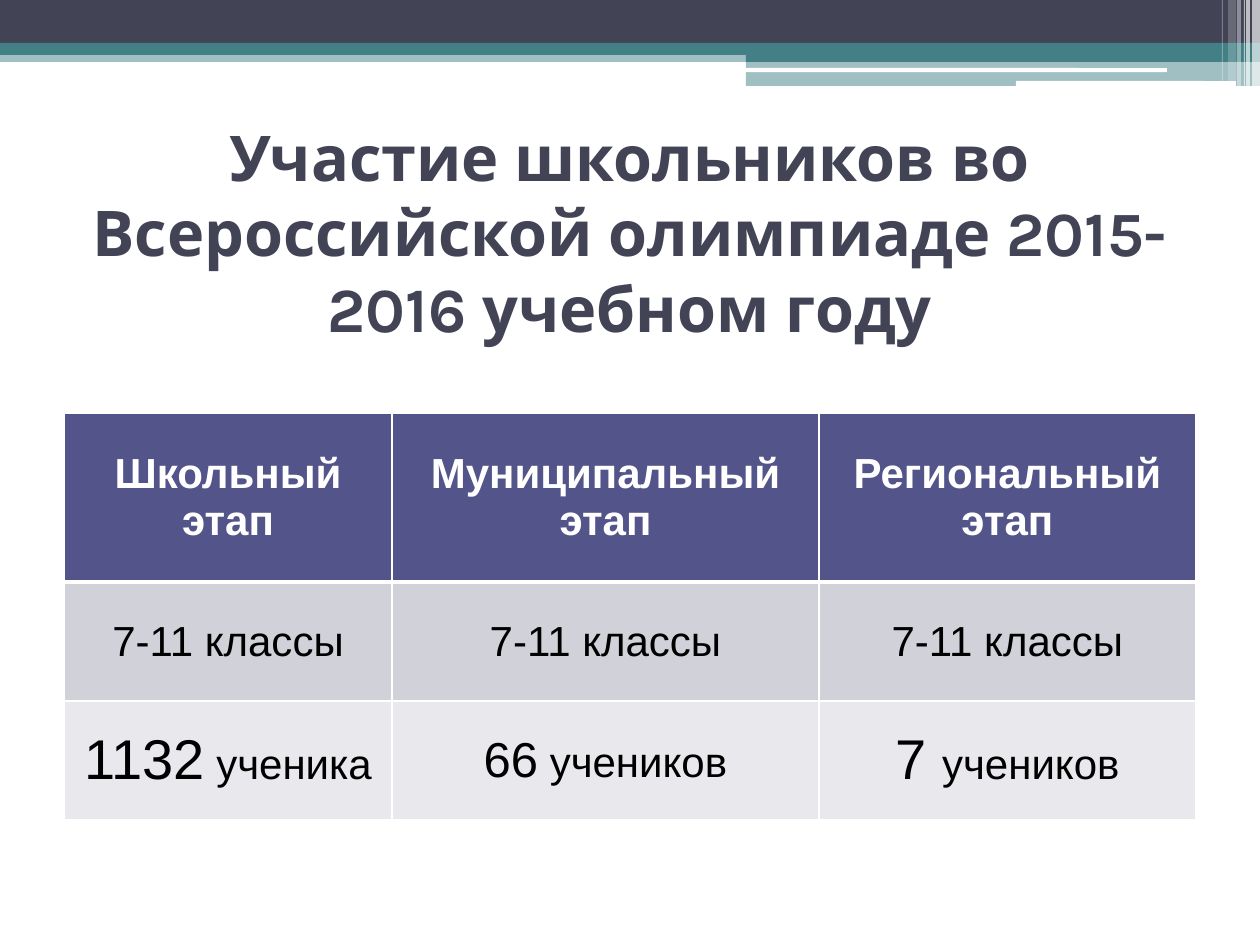
from dataclasses import dataclass

from lxml import etree
from pptx import Presentation
from pptx.dml.color import RGBColor
from pptx.enum.shapes import MSO_SHAPE
from pptx.enum.text import MSO_ANCHOR, MSO_AUTO_SIZE, PP_ALIGN
from pptx.oxml.ns import qn
from pptx.util import Emu, Pt

RECT, ROUNDED = MSO_SHAPE.RECTANGLE, MSO_SHAPE.ROUNDED_RECTANGLE
CENTER, MIDDLE = PP_ALIGN.CENTER, MSO_ANCHOR.MIDDLE
NO_AUTOFIT = MSO_AUTO_SIZE.NONE
PX_PER_INCH = 126
TITLE_ONLY = 5


@dataclass(frozen=True)
class Theme:
    dark: str = "424456"
    teal: str = "438086"
    white: str = "FFFFFF"
    black: str = "000000"
    header: str = "53548A"
    bands: tuple = ("D1D1DA", "E9E9ED")
    title_font: str = "Karla"
    table_font: str = "Arial"
    title_size: int = 36
    table_size: int = 24
    rule: int = 1
    header_rule: int = 3


def px(length):
    return Emu(round(length * 914400 / PX_PER_INCH))


class SlideBuilder:
    def __init__(self, slide, theme):
        self.slide = slide
        self.theme = theme

    def style(self, font, name, size, color, bold):
        font.name, font.size, font.bold = name, Pt(size), bold
        font.color.rgb = RGBColor.from_string(color)

    def bar(self, box, color, opacity=100, kind=RECT):
        bar = self.slide.shapes.add_shape(kind, *map(px, box))
        bar.shadow.inherit = False
        bar.line.fill.background()
        bar.fill.solid()
        bar.fill.fore_color.rgb = RGBColor.from_string(color)
        if opacity < 100:
            tint = bar.fill._xPr.find(".//" + qn("a:srgbClr"))
            etree.SubElement(tint, qn("a:alpha"), val=str(opacity * 1000))

    def title(self, box, text):
        title = self.slide.shapes.title
        title.left, title.top, title.width, title.height = map(px, box)
        frame = title.text_frame
        frame.text = text
        frame.word_wrap = True
        frame.auto_size = NO_AUTOFIT
        frame.vertical_anchor = MIDDLE
        paragraph = frame.paragraphs[0]
        paragraph.alignment = CENTER
        theme = self.theme
        self.style(paragraph.runs[0].font, theme.title_font, theme.title_size,
                   theme.dark, True)

    def borders(self, cell, row):
        theme = self.theme
        widths = {"L": theme.rule, "R": theme.rule,
                  "T": theme.header_rule if row == 1 else theme.rule,
                  "B": theme.header_rule if row == 0 else theme.rule}
        properties = cell._tc.get_or_add_tcPr()
        for side, width in widths.items():
            line = etree.SubElement(properties, qn("a:ln" + side), w=str(Pt(width)))
            paint = etree.SubElement(line, qn("a:solidFill"))
            etree.SubElement(paint, qn("a:srgbClr"), val=theme.white)

    def cell(self, cell, row, runs):
        theme = self.theme
        is_header = row == 0
        cell.vertical_anchor = MIDDLE
        self.borders(cell, row)
        cell.fill.solid()
        fill = theme.header if is_header else theme.bands[(row - 1) % 2]
        cell.fill.fore_color.rgb = RGBColor.from_string(fill)
        paragraph = cell.text_frame.paragraphs[0]
        paragraph.alignment = CENTER
        for text, size in runs:
            run = paragraph.add_run()
            run.text = text
            self.style(run.font, theme.table_font, size,
                       theme.white if is_header else theme.black, is_header)

    def table(self, left, top, widths, heights, rows):
        table = self.slide.shapes.add_table(
            len(heights), len(widths), px(left), px(top),
            px(sum(widths)), px(sum(heights))).table
        for column, width in zip(table.columns, widths):
            column.width = px(width)
        for row, height in zip(table.rows, heights):
            row.height = px(height)
        for r, row in enumerate(rows):
            for c, runs in enumerate(row):
                self.cell(table.cell(r, c), r, runs)


def main():
    theme = Theme()
    deck = Presentation()
    deck.slide_width, deck.slide_height = px(1260), px(945)
    builder = SlideBuilder(deck.slides.add_slide(deck.slide_layouts[TITLE_ONLY]), theme)

    # Header bands
    builder.bar((0, 50, 1260, 12), theme.teal, 50)
    builder.bar((0, 0, 1260, 43), theme.dark)
    builder.bar((0, 43, 1260, 12), theme.teal)
    builder.bar((746, 49, 514, 13), theme.teal)
    builder.bar((746, 61, 514, 25), theme.teal, 50)
    builder.bar((745, 68, 422, 4), theme.white, kind=ROUNDED)
    builder.bar((1016, 81, 220, 5), theme.white, kind=ROUNDED)

    # Translucent stripes in the corner: left, width, height, opacity
    for left, width, height, opacity in (
            (1252, 8, 86, 65), (1246, 4, 86, 65), (1244, 1, 86, 60),
            (1237, 4, 86, 40), (1228, 8, 81, 20), (1222, 1, 81, 30)):
        builder.bar((left, 0, width, height), theme.white, opacity)

    # Title
    builder.title((63, 158, 1134, 147),
                  "Участие школьников во Всероссийской олимпиаде "
                  "2015-2016 учебном году")

    # Olympiad stages
    size = theme.table_size
    stages = [[(f"{stage} этап", size)]
              for stage in ("Школьный", "Муниципальный", "Региональный")]
    grades = [[("7-11 классы", size)]] * len(stages)
    pupils = [[("1132", 32), (" ученика", size)],
              [("66", 28), (" учеников", size)],
              [("7 ", 32), ("учеников", size)]]
    builder.table(64, 413, (328, 427, 377), (169, 119, 119),
                  (stages, grades, pupils))

    deck.save("out.pptx")


if __name__ == "__main__":
    main()
